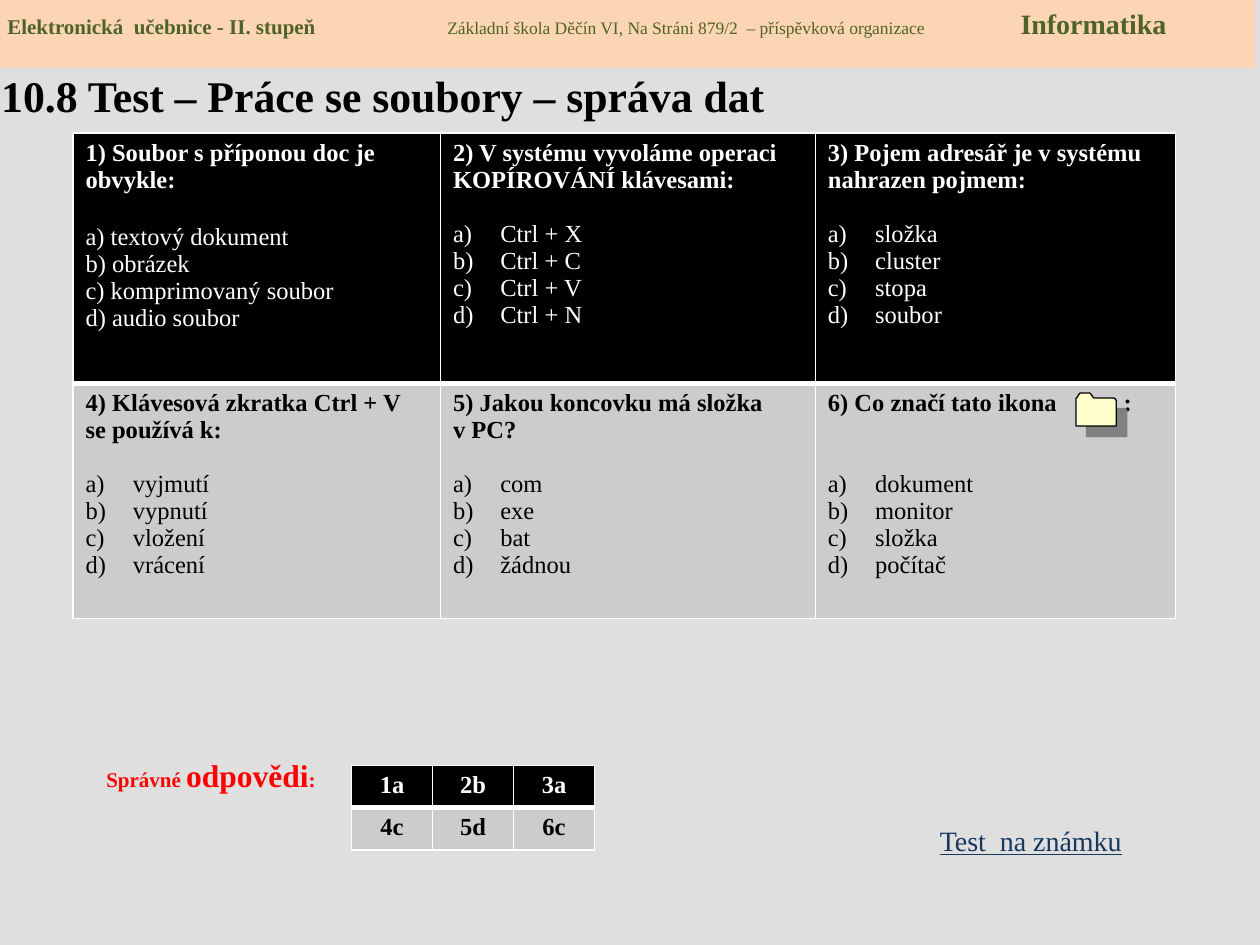
import pptx
import pptx.dml.color
import pptx.enum.shapes
import pptx.enum.text
import pptx.oxml
import pptx.oxml.ns
import pptx.util
from lxml import etree

Pt = pptx.util.Pt
ANCHOR = pptx.enum.text.MSO_ANCHOR
ALIGN = pptx.enum.text.PP_ALIGN
RECTANGLE = pptx.enum.shapes.MSO_SHAPE.RECTANGLE
qn = pptx.oxml.ns.qn
rgb = pptx.dml.color.RGBColor.from_string
NS = 'xmlns:a="http://schemas.openxmlformats.org/drawingml/2006/main"'


def add_run(paragraph, text, size, color, bold=False):
    run = paragraph.add_run()
    run.text = text
    run.font.name = "Times New Roman"
    run.font.size = Pt(size)
    run.font.bold = bold
    run.font.color.rgb = rgb(color)
    return run


def style_cell(cell, row):
    """White borders, a thick rule between the two rows, flat fill."""
    widths = {"lnL": 1, "lnR": 1, "lnT": (1, 3)[row], "lnB": (3, 1)[row]}
    for side, width in widths.items():
        cell._tc.get_or_add_tcPr().append(pptx.oxml.parse_xml(
            f'<a:{side} {NS} w="{Pt(width)}"><a:solidFill>'
            f'<a:srgbClr val="FFFFFF"/></a:solidFill></a:{side}>'))
    cell.fill.solid()
    cell.fill.fore_color.rgb = rgb(("000000", "CCCCCC")[row])


TEXT_COLORS = ("FFFFFF", "000000")
prs = pptx.Presentation()
prs.slide_width, prs.slide_height = Pt(720), Pt(540)
slide = prs.slides.add_slide(prs.slide_layouts[5])
slide.background.fill.solid()
slide.background.fill.fore_color.rgb = rgb("DFDFDF")

# Title
title = slide.shapes.title
title.left, title.top, title.width, title.height = Pt(-6.5), Pt(9.4), Pt(648), Pt(90)
title.text_frame.vertical_anchor = ANCHOR.MIDDLE
heading = title.text_frame.paragraphs[0]
heading.alignment = ALIGN.LEFT
add_run(heading, "10.8 Test – Práce se soubory – správa dat", 25, "000000", True)

# Questions: text, gap before the answers, numbered answers
questions = [
    [("1) Soubor s příponou doc je obvykle:", 17,
      ["a) textový dokument", "b) obrázek", "c) komprimovaný soubor", "d) audio soubor"]),
     ("2) V systému vyvoláme operaci KOPÍROVÁNÍ klávesami:", 15.5,
      ["Ctrl + X", "Ctrl + C", "Ctrl + V", "Ctrl + N"]),
     ("3) Pojem adresář je v systému nahrazen pojmem:", 15.5,
      ["složka", "cluster", "stopa", "soubor"])],
    [("4) Klávesová zkratka Ctrl + V\vse používá k:", 15.5,
      ["vyjmutí", "vypnutí", "vložení", "vrácení"]),
     ("5) Jakou koncovku má složka\vv PC?", 15.5,
      ["com", "exe", "bat", "žádnou"]),
     ("6) Co značí tato ikona\t:", 31,
      ["dokument", "monitor", "složka", "počítač"])],
]
test = slide.shapes.add_table(2, 3, Pt(41.7), Pt(76), Pt(630), Pt(277.5)).table
for column, width in zip(test.columns, (210, 214.2, 205.8)):
    column.width = Pt(width)
for row, height in zip(test.rows, (143, 134.5)):
    row.height = Pt(height)
for r, question_row in enumerate(questions):
    for c, (question, gap, answers) in enumerate(question_row):
        cell = test.cell(r, c)
        style_cell(cell, r)
        paragraph = cell.text_frame.paragraphs[0]
        if "\t" in question:
            paragraph._p.get_or_add_pPr().append(pptx.oxml.parse_xml(
                f'<a:tabLst {NS}><a:tab pos="{Pt(169)}" algn="l"/></a:tabLst>'))
        for i, line in enumerate(question.split("\v")):
            if i:
                paragraph.add_line_break()
            add_run(paragraph, line, 14, TEXT_COLORS[r], True)
        for i, answer in enumerate(answers):
            paragraph = cell.text_frame.add_paragraph()
            if not answer.startswith(("a)", "b)", "c)", "d)")):
                properties = paragraph._p.get_or_add_pPr()
                properties.set("marL", str(Pt(27)))
                properties.set("indent", str(Pt(-27)))
                etree.SubElement(properties, qn("a:buFont"), typeface="+mj-lt")
                etree.SubElement(properties, qn("a:buAutoNum"), type="alphaLcParenR")
            if i == 0:
                paragraph.space_before = Pt(gap)
            add_run(paragraph, answer, 14, TEXT_COLORS[r])

# Label of the answer key
key_label = slide.shapes.add_textbox(Pt(36.7), Pt(428.4), Pt(167.8), Pt(29)).text_frame
key_label.word_wrap = True
key_label.paragraphs[0].alignment = ALIGN.CENTER
for text, size in (("Správné ", 12), ("odpovědi", 18), (":", 12)):
    add_run(key_label.paragraphs[0], text, size, "FF0000", True)

# Pointer to the graded test
graded_test = slide.shapes.add_textbox(Pt(530), Pt(467), Pt(136), Pt(26.6)).text_frame
graded_test.word_wrap = True
add_run(graded_test.paragraphs[0], "Test  na známku", 16, "17375E").font.underline = True

# Answer key
key = slide.shapes.add_table(2, 3, Pt(200.9), Pt(437.5), Pt(138.9), Pt(48)).table
for r, key_row in enumerate((("1a", "2b", "3a"), ("4c", "5d", "6c"))):
    key.rows[r].height = Pt(24)
    for c, answer in enumerate(key_row):
        key.columns[c].width = Pt(46.3)
        cell = key.cell(r, c)
        style_cell(cell, r)
        cell.text_frame.paragraphs[0].alignment = ALIGN.CENTER
        add_run(cell.text_frame.paragraphs[0], answer, 14, TEXT_COLORS[r], True)

# Header band with tab stops for its three parts
header = slide.shapes.add_shape(RECTANGLE, Pt(-2.9), Pt(0), Pt(720), Pt(38.7))
header.shadow.inherit = False
header.fill.solid()
header.fill.fore_color.rgb = rgb("FCD5B5")
header.line.fill.background()
header.text_frame.vertical_anchor = ANCHOR.TOP
band = header.text_frame.paragraphs[0]
band.alignment = ALIGN.LEFT
band._p.get_or_add_pPr().append(pptx.oxml.parse_xml(
    f'<a:tabLst {NS}><a:tab pos="{Pt(251.4)}" algn="l"/>'
    f'<a:tab pos="{Pt(579)}" algn="l"/></a:tabLst>'))
for text, size, bold in (
        ("Elektronická  učebnice - II. stupeň\t", 12, True),
        ("Základní škola Děčín VI, Na Stráni 879/2  – příspěvková organizace\t", 10, False),
        ("Informatika", 16, True)):
    add_run(band, text, size, "4F6228", bold)

# Folder icon, in tenths of a point
outline = slide.shapes.build_freeform(6149, 2275, scale=Pt(0.1))
outline.add_line_segments([
    (6156, 2270), (6163, 2256), (6172, 2246), (6228, 2246), (6237, 2256),
    (6246, 2270), (6253, 2275), (6365, 2275), (6374, 2280), (6379, 2290),
    (6379, 2434), (6149, 2434)], close=True)
folder = outline.convert_to_shape()
folder.fill.solid()
folder.fill.fore_color.rgb = rgb("FFFFCC")
folder.line.color.rgb = rgb("000000")
folder.line.width = Pt(0.75)
folder.shadow.inherit = False
folder._element.spPr.find(qn("a:effectLst")).append(pptx.oxml.parse_xml(
    f'<a:outerShdw {NS} dist="{Pt(8.5)}" dir="2700000" algn="ctr" rotWithShape="0">'
    '<a:srgbClr val="808080"/></a:outerShdw>'))

prs.save("out.pptx")
